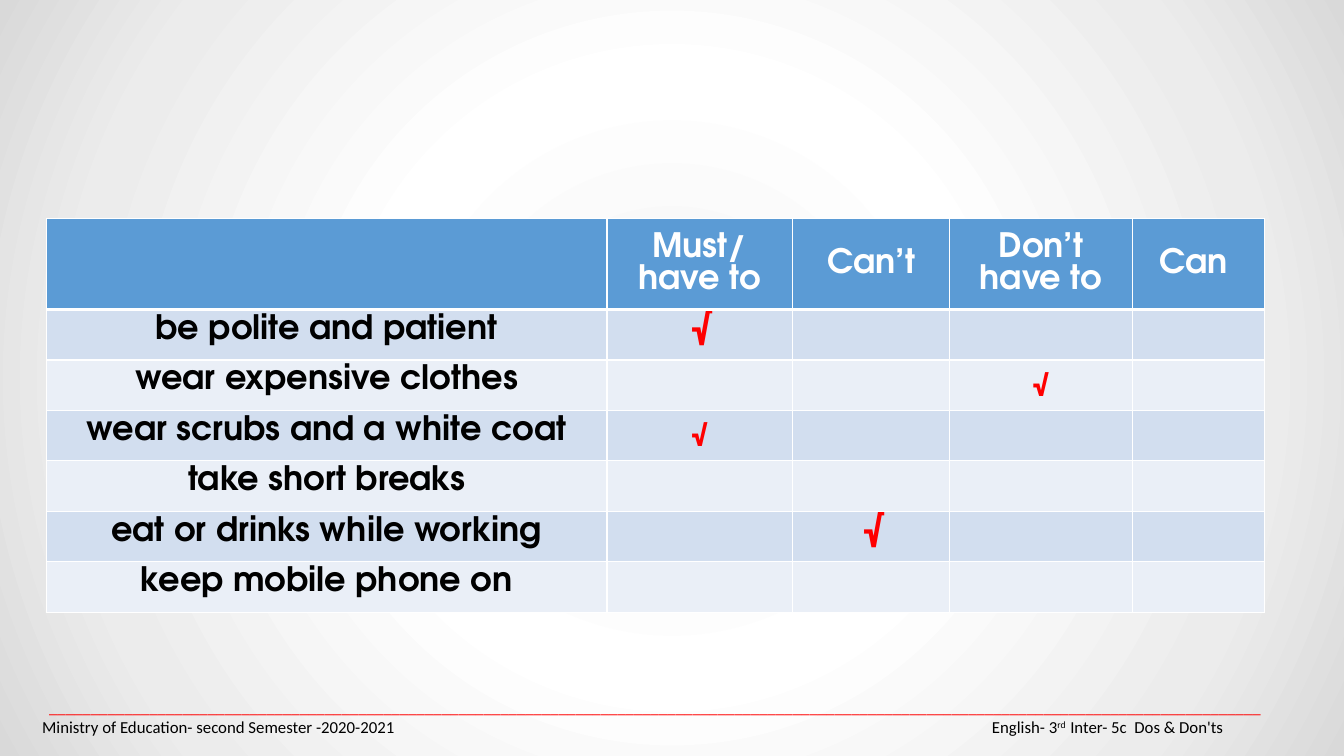
from dataclasses import dataclass

from pptx import Presentation
from pptx.dml.color import RGBColor
from pptx.enum.text import MSO_ANCHOR, PP_ALIGN
from pptx.oxml import parse_xml
from pptx.oxml.ns import nsdecls, qn
from pptx.slide import Slide
from pptx.table import _Cell
from pptx.text.text import Font
from pptx.util import Inches, Pt

ROUND = "TeX Gyre Adventor"
DENSE = "Roboto Condensed"
TICK = "√"
HEADS = ["", "Must/\nhave to", "Can’t", "Don’t have to", "Can "]
WIDTHS = [5.56, 1.84, 1.56, 1.81, 1.31]
BANDS = ["D2DEEF", "EAEFF7"]
STOPS = [(0, "F2F2F2"), (39, "FFFFFF"), (78, "ECECEC"), (100, "D9D9D9")]


@dataclass
class Rule:
    text: str
    col: int = 0
    font: str = DENSE


RULES = [
    Rule("be polite and patient", 1, ROUND),
    Rule("wear expensive clothes", 3),
    Rule("wear scrubs and a white coat", 1),
    Rule("take short breaks"),
    Rule("eat or drinks while working", 2, ROUND),
    Rule(" keep mobile phone on "),
]


def color(code: str) -> RGBColor:
    return RGBColor.from_string(code)


def style(font: Font, name: str, size: int, code: str, bold: bool) -> None:
    font.name = name
    font.size = Pt(size)
    font.bold = bold
    font.color.rgb = color(code)


def paint(cell: _Cell, code: str) -> None:
    cell.fill.solid()
    cell.fill.fore_color.rgb = color(code)


def write(cell: _Cell, text: str, name: str, code: str) -> None:
    cell.text_frame.text = text
    for para in cell.text_frame.paragraphs:
        para.alignment = PP_ALIGN.CENTER
        for run in para.runs:
            style(run.font, name, 24, code, True)


def underline(cell: _Cell) -> None:
    line = parse_xml(
        f'<a:lnB {nsdecls("a")} w="{Pt(3)}"><a:solidFill><a:srgbClr val="FFFFFF"/>'
        "</a:solidFill></a:lnB>"
    )
    cell._tc.get_or_add_tcPr().insert(0, line)


def shade(slide: Slide) -> None:
    slide.background.fill.gradient()
    grad = slide.element.find(".//" + qn("a:gradFill"))
    stops = "".join(
        f'<a:gs pos="{place * 1000}"><a:srgbClr val="{code}"/></a:gs>'
        for place, code in STOPS
    )
    fresh = parse_xml(
        f'<a:gradFill {nsdecls("a")} rotWithShape="1"><a:gsLst>{stops}</a:gsLst>'
        '<a:path path="circle"><a:fillToRect l="50000" t="50000" r="50000" b="50000"/>'
        "</a:path></a:gradFill>"
    )
    grad.getparent().replace(grad, fresh)


def chart_rules(slide: Slide) -> None:
    frame = slide.shapes.add_table(
        len(RULES) + 1, len(HEADS), Inches(0.46), Inches(2.17), Inches(12.08), Inches(3.9)
    )
    table = frame.table
    for col, width in zip(table.columns, WIDTHS):
        col.width = Inches(width)
    for num, row in enumerate(table.rows):
        row.height = Inches(0.5 if num else 0.9)
    for num, head in enumerate(HEADS):
        cell = table.cell(0, num)
        paint(cell, "5B9BD5")
        underline(cell)
        cell.vertical_anchor = MSO_ANCHOR.MIDDLE
        write(cell, head, ROUND, "FFFFFF")
    for num, rule in enumerate(RULES):
        for cell in table.rows[num + 1].cells:
            paint(cell, BANDS[num % 2])
        write(table.cell(num + 1, 0), rule.text, ROUND, "000000")
        if rule.col:
            write(table.cell(num + 1, rule.col), TICK, rule.font, "FF0000")


def add_footer(slide: Slide) -> None:
    box = slide.shapes.add_textbox(Inches(0.32), Inches(6.91), Inches(12.37), Inches(0.4))
    frame = box.text_frame
    frame.word_wrap = True
    frame.vertical_anchor = MSO_ANCHOR.MIDDLE
    frame.text = "_" * 145
    line = frame.paragraphs[0]
    line.alignment = PP_ALIGN.CENTER
    style(line.runs[0].font, "Calibri", 12, "FF0000", False)
    note = frame.add_paragraph()
    note.alignment = PP_ALIGN.LEFT
    note.text = "Ministry of Education- second Semester -2020-2021\tEnglish- 3"
    for text in ["rd  ", "Inter- 5c  Dos & Don'ts"]:
        note.add_run().text = text
    for run in note.runs:
        style(run.font, "Calibri", 12, "000000", False)
    note.runs[1].font._element.set("baseline", "30000")
    tabs = f'<a:tabLst {nsdecls("a")}><a:tab pos="{Inches(9.42)}" algn="l"/></a:tabLst>'
    note._p.get_or_add_pPr().append(parse_xml(tabs))


def main() -> None:
    deck = Presentation()
    deck.slide_width = Inches(13.33)
    deck.slide_height = Inches(7.5)
    slide = deck.slides.add_slide(deck.slide_layouts[6])
    shade(slide)
    add_footer(slide)
    chart_rules(slide)
    deck.save("out.pptx")


if __name__ == "__main__":
    main()
